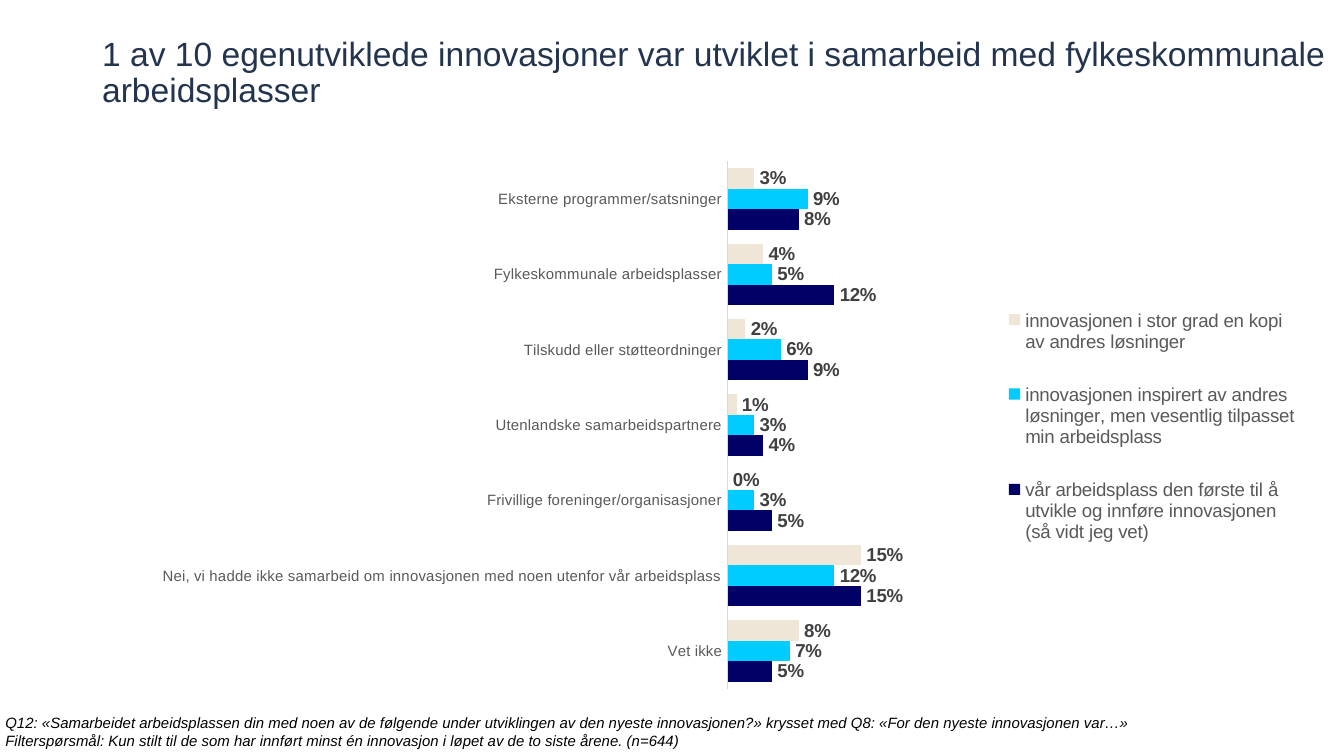
from lxml import etree
from pptx import Presentation
from pptx.chart.data import CategoryChartData
from pptx.dml.color import RGBColor
from pptx.enum.chart import (XL_CHART_TYPE, XL_LABEL_POSITION, XL_LEGEND_POSITION,
                             XL_TICK_LABEL_POSITION, XL_TICK_MARK)
from pptx.enum.text import MSO_ANCHOR, MSO_AUTO_SIZE
from pptx.oxml.ns import qn
from pptx.util import Inches, Pt

TITLE = ("1 av 10 egenutviklede innovasjoner var utviklet i samarbeid med "
         "fylkeskommunale arbeidsplasser")
NOTES = [
    "Q12: «Samarbeidet arbeidsplassen din med noen av de følgende under utviklingen av den "
    "nyeste innovasjonen?» krysset med Q8: «For den nyeste innovasjonen var…»",
    "Filterspørsmål: Kun stilt til de som har innført minst én innovasjon i løpet av de to "
    "siste årene. (n=644)",
]
CATEGORIES = [
    "Vet ikke",
    "Nei, vi hadde ikke samarbeid om innovasjonen med noen utenfor vår arbeidsplass",
    "Frivillige foreninger/organisasjoner",
    "Utenlandske samarbeidspartnere",
    "Tilskudd eller støtteordninger",
    "Fylkeskommunale arbeidsplasser",
    "Eksterne programmer/satsninger",
]
SERIES = [
    ("vår arbeidsplass den første til å utvikle og innføre innovasjonen (så vidt jeg vet)",
     "000066", [0.05, 0.15, 0.05, 0.04, 0.09, 0.12, 0.08]),
    ("innovasjonen inspirert av andres løsninger, men vesentlig tilpasset min arbeidsplass",
     "00CCFF", [0.07, 0.12, 0.03, 0.03, 0.06, 0.05, 0.09]),
    ("innovasjonen i stor grad en kopi av andres løsninger",
     "F0E6D8", [0.08, 0.15, 0, 0.01, 0.02, 0.04, 0.03]),
]


def rgb(code):
    return RGBColor.from_string(code)


def style_font(font, size, color, bold=False, italic=False):
    font.name = "Arial"
    font.size = Pt(size)
    font.color.rgb = rgb(color)
    font.bold = bold
    font.italic = italic


def add_text(page, box, lines, size, color, italic=False):
    """Add a text box without margins and return its text frame."""
    frame = page.shapes.add_textbox(*map(Inches, box)).text_frame
    frame.margin_left = frame.margin_right = frame.margin_top = frame.margin_bottom = 0
    frame.text = "\n".join(lines)
    for para in frame.paragraphs:
        style_font(para.font, size, color, italic=italic)
    return frame


def add_title(page, box):
    frame = add_text(page, box, [TITLE], 18, "23344F")
    frame.word_wrap = True
    frame.vertical_anchor = MSO_ANCHOR.BOTTOM
    frame.paragraphs[0].line_spacing = 0.9


def add_footnote(page, box):
    frame = add_text(page, box, NOTES, 8, "000000", italic=True)
    frame.word_wrap = False
    frame.auto_size = MSO_AUTO_SIZE.SHAPE_TO_FIT_TEXT


def set_layout(parent, after, box, inner=False):
    """Place a chart part by fractions of the chart area, after the named child."""
    for old in parent.findall(qn("c:layout")):
        parent.remove(old)
    layout = etree.Element(qn("c:layout"))
    manual = etree.SubElement(layout, qn("c:manualLayout"))
    settings = [("layoutTarget", "inner")] if inner else []
    settings += [("xMode", "edge"), ("yMode", "edge"), *zip("xywh", box)]
    for tag, value in settings:
        etree.SubElement(manual, qn(f"c:{tag}")).set("val", str(value))
    if after:
        parent.find(qn(after)).addnext(layout)
    else:
        parent.insert(0, layout)


def style_axes(chart):
    categories = chart.category_axis
    categories.major_tick_mark = categories.minor_tick_mark = XL_TICK_MARK.NONE
    categories.tick_label_position = XL_TICK_LABEL_POSITION.NEXT_TO_AXIS
    categories.format.line.color.rgb = rgb("D9D9D9")
    categories.format.line.width = Pt(0.75)
    style_font(categories.tick_labels.font, 8, "595959")

    values = chart.value_axis
    values.minimum_scale = -0.1
    values.maximum_scale = 0.6
    values.has_major_gridlines = False
    values.visible = False


def style_series(series, color):
    series.format.fill.solid()
    series.format.fill.fore_color.rgb = rgb(color)
    series.invert_if_negative = False
    labels = series.data_labels
    labels.show_value = True
    labels.position = XL_LABEL_POSITION.OUTSIDE_END
    labels.number_format = "0%"
    labels.number_format_is_linked = False
    style_font(labels.font, 10, "404040", bold=True)


def add_bar_chart(page, box):
    data = CategoryChartData(number_format="0%")
    data.categories = CATEGORIES
    for name, _, values in SERIES:
        data.add_series(name, values)
    chart = page.shapes.add_chart(XL_CHART_TYPE.BAR_CLUSTERED, *map(Inches, box), data).chart
    style_font(chart.font, 10, "000000")
    chart.has_title = False
    style_axes(chart)

    plot = chart.plots[0]
    plot.gap_width = 70
    plot.overlap = 0
    plot.vary_by_categories = False
    for series, (_, color, _) in zip(plot.series, SERIES):
        style_series(series, color)

    chart.has_legend = True
    legend = chart.legend
    legend.position = XL_LEGEND_POSITION.RIGHT
    legend.include_in_layout = False
    style_font(legend.font, 10, "595959")

    plot_area = chart.element.find(".//" + qn("c:plotArea"))
    set_layout(plot_area, None, (0.476, 0.034, 0.49, 0.886), inner=True)
    set_layout(chart.element.find(".//" + qn("c:legend")), "c:legendPos",
               (0.77, 0.23, 0.23, 0.5))


def main():
    deck = Presentation()
    deck.slide_width = Inches(10)
    deck.slide_height = deck.slide_width * 9 // 16
    page = deck.slides.add_slide(deck.slide_layouts[6])
    add_title(page, (0.76, 0.49, 9.15, 0.33))
    add_footnote(page, (0.04, 5.31, 8.57, 0.27))
    add_bar_chart(page, (0.25, 1.05, 9.46, 4.43))
    deck.save("out.pptx")


if __name__ == "__main__":
    main()
